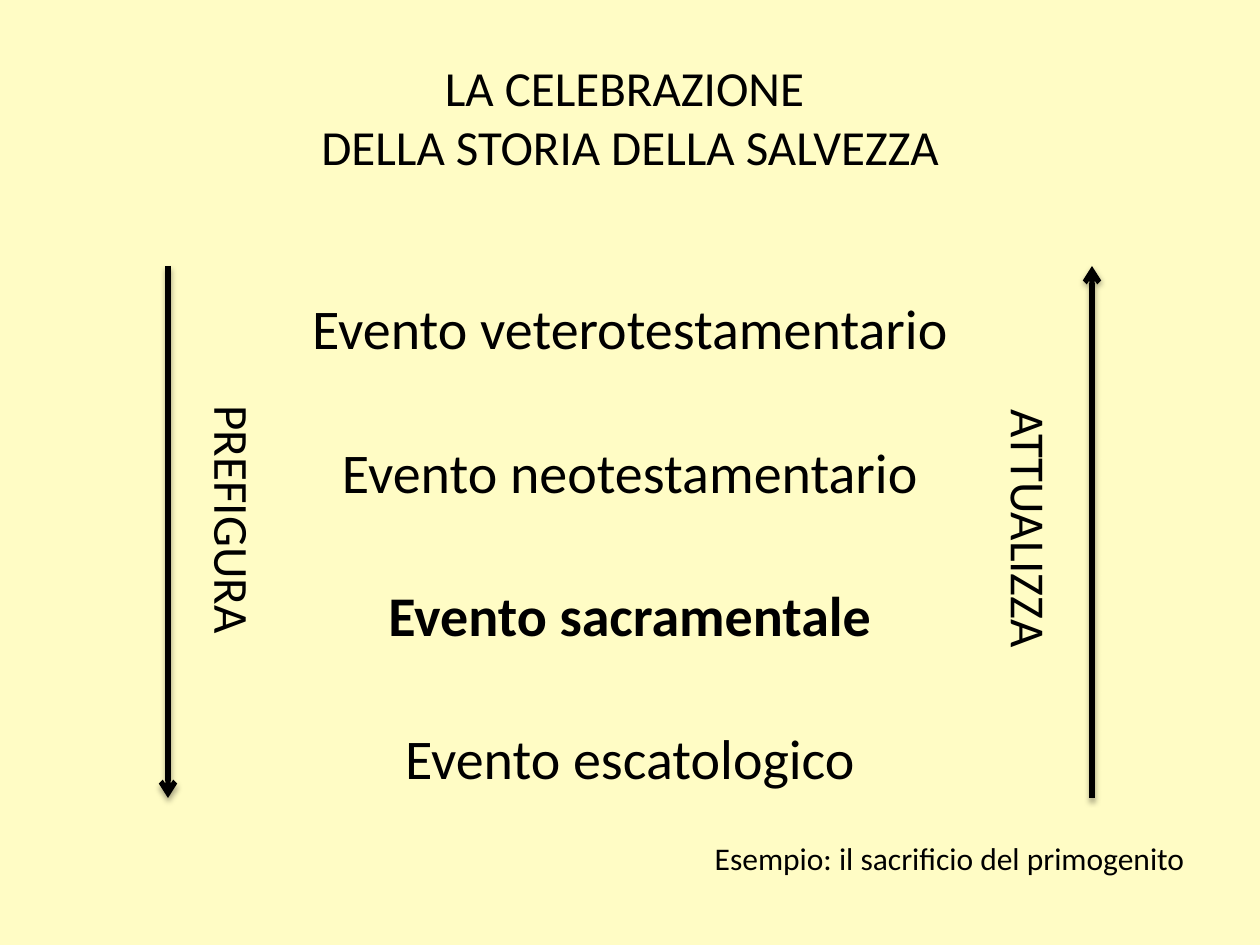
"""Build a slide on the celebration of salvation history."""
from lxml import etree
from pptx import Presentation
from pptx.dml.color import RGBColor
from pptx.enum.shapes import MSO_CONNECTOR
from pptx.enum.text import MSO_ANCHOR, PP_ALIGN
from pptx.oxml import parse_xml
from pptx.util import Pt

LINE = MSO_CONNECTOR.STRAIGHT
MIDDLE = MSO_ANCHOR.MIDDLE
LEFT, CENTER, RIGHT = PP_ALIGN.LEFT, PP_ALIGN.CENTER, PP_ALIGN.RIGHT
NS = "http://schemas.openxmlformats.org/drawingml/2006/main"
FONT, INK, PAPER = "Calibri", "000000", "FFFCC5"

TITLE = "LA CELEBRAZIONE \vDELLA STORIA DELLA SALVEZZA"
EVENTS = [
    ("Evento veterotestamentario", False),
    ("Evento neotestamentario", False),
    ("Evento sacramentale", True),
    ("Evento escatologico", False),
]
NOTE = "Esempio: il sacrificio del primogenito"
LABELS = [("PREFIGURA", 133.6, 224.8, 164), ("ATTUALIZZA", 588.6, 227, 172)]
HIGH, LOW = 152, 456
ARROWS = [(96, HIGH, LOW), (624, LOW, HIGH)]
MARGIN, WIDE, TALL = 36, 720, 540
SHADOW = f"""<a:effectLst xmlns:a="{NS}">
<a:outerShdw blurRad="{Pt(3.1)}" dist="{Pt(1.8)}" dir="5400000" rotWithShape="0">
<a:srgbClr val="{INK}"><a:alpha val="35000"/></a:srgbClr>
</a:outerShdw></a:effectLst>"""


def color(code):
    return RGBColor.from_string(code)


def style(par, size, align=LEFT, bold=False):
    par.alignment = align
    for run in par.runs:
        run.font.name = FONT
        run.font.size = Pt(size)
        run.font.bold = bold
        run.font.color.rgb = color(INK)


def add_box(slide, x, y, w, h):
    box = slide.shapes.add_textbox(Pt(x), Pt(y), Pt(w), Pt(h))
    box.text_frame.word_wrap = True
    return box


def add_title(slide):
    frame = add_box(slide, MARGIN, 21.6, WIDE - 2 * MARGIN, 90).text_frame
    frame.vertical_anchor = MIDDLE
    frame.text = TITLE
    style(frame.paragraphs[0], 28, CENTER)


def add_events(slide):
    frame = add_box(slide, MARGIN, 126, WIDE - 2 * MARGIN, 414).text_frame
    frame.text = "\n".join([name for name, _ in EVENTS] + [NOTE])
    *pars, last = frame.paragraphs
    for par, (_, bold) in zip(pars, EVENTS):
        style(par, 32, CENTER, bold)
        par.line_spacing = 2.0
        par.space_before = Pt(5)
    style(last, 18, RIGHT)
    last.space_before = Pt(27.5)


def add_label(slide, text, mid, top, span, high=41):
    box = add_box(slide, mid - span / 2, top + (span - high) / 2, span, high)
    box.rotation = 90
    box.text_frame.text = text
    style(box.text_frame.paragraphs[0], 28)


def add_arrow(slide, x, start, end):
    arrow = slide.shapes.add_connector(LINE, Pt(x), Pt(start), Pt(x), Pt(end))
    arrow.line.width = Pt(3)
    arrow.line.color.rgb = color(INK)
    etree.SubElement(arrow.line._get_or_add_ln(), f"{{{NS}}}tailEnd", type="arrow")
    arrow._element.spPr.append(parse_xml(SHADOW))


def main():
    deck = Presentation()
    deck.slide_width, deck.slide_height = Pt(WIDE), Pt(TALL)
    slide = deck.slides.add_slide(deck.slide_layouts[6])
    fill = slide.background.fill
    fill.solid()
    fill.fore_color.rgb = color(PAPER)
    add_events(slide)
    add_title(slide)
    for arrow in ARROWS:
        add_arrow(slide, *arrow)
    for label in LABELS:
        add_label(slide, *label)
    deck.save("out.pptx")


if __name__ == "__main__":
    main()
